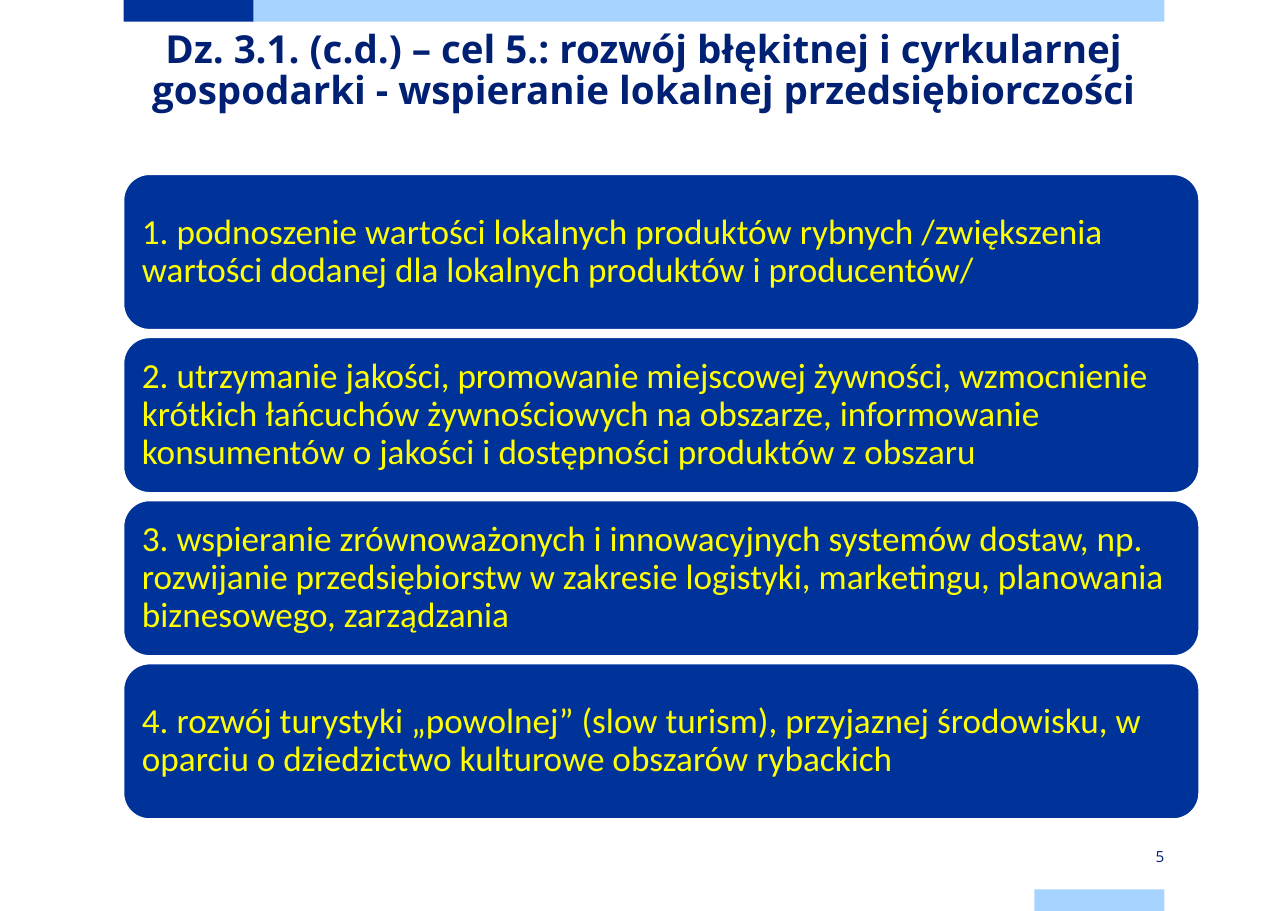
from pptx import Presentation
from pptx.dml.color import RGBColor
from pptx.enum.shapes import MSO_SHAPE
from pptx.enum.text import MSO_ANCHOR, MSO_AUTO_SIZE, PP_ALIGN
from pptx.util import Cm, Pt

BLUE = RGBColor(0x00, 0x33, 0x99)
LIGHT_BLUE = RGBColor(0xA6, 0xD3, 0xFF)
NAVY = RGBColor(0x00, 0x20, 0x73)
YELLOW = RGBColor(0xFF, 0xFF, 0x00)
WHITE = RGBColor(0xFF, 0xFF, 0xFF)

SLIDE_WIDTH, SLIDE_HEIGHT = Cm(29.7), Cm(21)
MARGIN, CONTENT_WIDTH = Cm(2.85), Cm(24)
BAR_HEIGHT, ACCENT_WIDTH = Cm(0.5), Cm(3)

TITLE = ("Dz. 3.1. (c.d.) – cel 5.: rozwój błękitnej i cyrkularnej "
         "gospodarki - wspieranie lokalnej przedsiębiorczości")
GOALS = [
    "1. podnoszenie wartości lokalnych produktów rybnych /zwiększenia "
    "wartości dodanej dla lokalnych produktów i producentów/",
    "2. utrzymanie jakości, promowanie miejscowej żywności, wzmocnienie "
    "krótkich łańcuchów żywnościowych na obszarze, informowanie "
    "konsumentów o jakości i dostępności produktów z obszaru",
    "3. wspieranie zrównoważonych i innowacyjnych systemów dostaw, np. "
    "rozwijanie przedsiębiorstw w zakresie logistyki, marketingu, planowania "
    "biznesowego, zarządzania",
    "4. rozwój turystyki „powolnej” (slow turism), przyjaznej środowisku, w "
    "oparciu o dziedzictwo kulturowe obszarów rybackich",
]

TITLE_FONT = {"name": "Open Sans", "size": Pt(25.2), "bold": True}
GOAL_FONT = {"name": "Calibri", "size": Pt(23), "bold": False}
NUMBER_FONT = {"name": "Open Sans", "size": Pt(10), "bold": False}


def set_attributes(target, values):
    for name, value in values.items():
        setattr(target, name, value)


def write_text(shape, text, font, color, alignment, anchor,
               inset=0, line_spacing=1.0):
    frame = shape.text_frame
    set_attributes(frame, {
        "text": text, "word_wrap": True, "auto_size": MSO_AUTO_SIZE.NONE,
        "vertical_anchor": anchor, "margin_left": inset, "margin_right": inset,
        "margin_top": inset, "margin_bottom": inset,
    })
    paragraph = frame.paragraphs[0]
    set_attributes(paragraph, {"alignment": alignment, "line_spacing": line_spacing,
                               "space_before": Pt(0)})
    set_attributes(paragraph.font, font)
    paragraph.font.color.rgb = color


def add_filled_shape(slide, kind, left, top, width, height, color):
    shape = slide.shapes.add_shape(kind, left, top, width, height)
    shape.shadow.inherit = False
    shape.fill.solid()
    shape.fill.fore_color.rgb = color
    shape.line.fill.background()
    return shape


def add_bars(slide, left, width, height):
    """Draw the two-part bar at the top edge and the short bar at the bottom."""
    accent_left = left + width - ACCENT_WIDTH
    for bar_left, top, bar_width, color in (
        (left, 0, ACCENT_WIDTH, BLUE),
        (left + ACCENT_WIDTH, 0, width - ACCENT_WIDTH, LIGHT_BLUE),
        (accent_left, height - BAR_HEIGHT, ACCENT_WIDTH, LIGHT_BLUE),
    ):
        add_filled_shape(slide, MSO_SHAPE.RECTANGLE, bar_left, top,
                         bar_width, BAR_HEIGHT, color)


def add_title(slide, left, top, width, height):
    title = slide.shapes.title
    set_attributes(title, {"left": left, "top": top, "width": width, "height": height})
    write_text(title, TITLE, TITLE_FONT, NAVY, PP_ALIGN.CENTER,
               MSO_ANCHOR.TOP, line_spacing=0.9)


def add_goal_cards(slide, left, top, width, height, gap):
    """Stack one card per goal, sharing the height equally."""
    card_height = (height - gap * (len(GOALS) - 1)) // len(GOALS)
    for index, goal in enumerate(GOALS):
        card = add_filled_shape(slide, MSO_SHAPE.ROUNDED_RECTANGLE, left,
                                top + index * (card_height + gap),
                                width, card_height, BLUE)
        card.line.color.rgb = WHITE
        card.line.width = Pt(1)
        write_text(card, goal, GOAL_FONT, YELLOW, PP_ALIGN.LEFT,
                   MSO_ANCHOR.MIDDLE, inset=Cm(0.25), line_spacing=0.9)


def add_slide_number(slide, left, top, width, height):
    box = slide.shapes.add_textbox(left, top, width, height)
    write_text(box, "5", NUMBER_FONT, NAVY, PP_ALIGN.RIGHT, MSO_ANCHOR.MIDDLE)


def main():
    presentation = Presentation()
    presentation.slide_width = SLIDE_WIDTH
    presentation.slide_height = SLIDE_HEIGHT
    slide = presentation.slides.add_slide(presentation.slide_layouts[5])
    add_bars(slide, MARGIN, CONTENT_WIDTH, SLIDE_HEIGHT)
    add_title(slide, MARGIN, Cm(0.69), CONTENT_WIDTH, Cm(2.2))
    add_goal_cards(slide, MARGIN, Cm(4.02), Cm(24.8), Cm(14.86), Cm(0.18))
    add_slide_number(slide, MARGIN + CONTENT_WIDTH - ACCENT_WIDTH, Cm(19.5),
                     ACCENT_WIDTH, BAR_HEIGHT)
    presentation.save("out.pptx")


if __name__ == "__main__":
    main()
